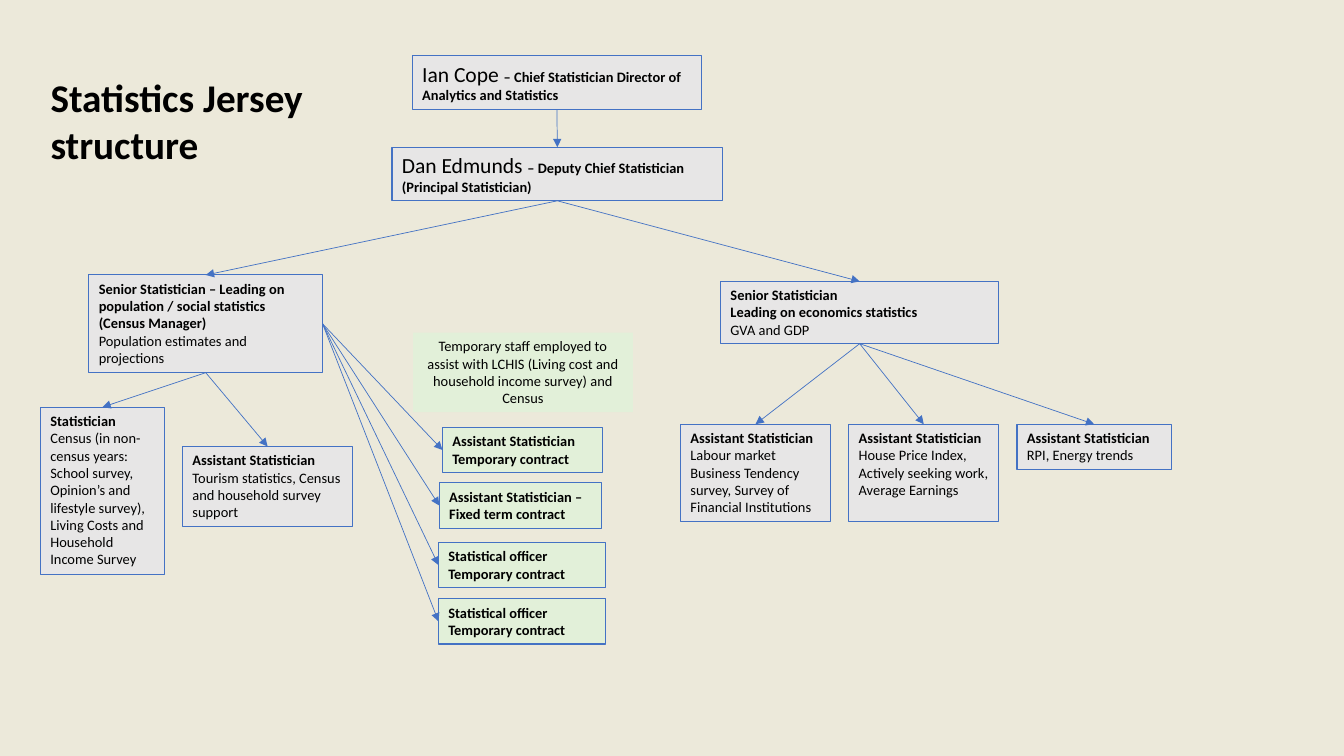
from lxml import etree
from pptx import Presentation
from pptx.dml.color import RGBColor
from pptx.enum.shapes import MSO_CONNECTOR, MSO_SHAPE
from pptx.enum.text import MSO_ANCHOR, MSO_AUTO_SIZE, PP_ALIGN
from pptx.oxml.ns import qn
from pptx.util import Cm, Pt

RECTANGLE = MSO_SHAPE.RECTANGLE
STRAIGHT = MSO_CONNECTOR.STRAIGHT
TOP_ANCHOR = MSO_ANCHOR.TOP
NO_AUTOFIT = MSO_AUTO_SIZE.NONE
LEFT, CENTER = PP_ALIGN.LEFT, PP_ALIGN.CENTER
TOP_SIDE, LEFT_SIDE, BOTTOM_SIDE, RIGHT_SIDE = range(4)
TITLE_ONLY = 5

FONT = "Calibri"
NAME_SIZE, BODY_SIZE, TITLE_SIZE = 15.4, 10.3, 28
BACKGROUND, GREY, GREEN = "ECE9DA", "E7E6E6", "E2F0D9"
BLUE, BLACK = "4472C4", "000000"


def color(hex_value):
    return RGBColor.from_string(hex_value)


def bold(text):
    return text, BODY_SIZE, True


def plain(text):
    return text, BODY_SIZE, False


def name(text):
    return text, NAME_SIZE, False


def write(shape, paragraphs, alignment=LEFT):
    """Fill a shape with paragraphs, each a list of (text, size, bold) runs."""
    frame = shape.text_frame
    frame.word_wrap = True
    frame.auto_size = NO_AUTOFIT
    frame.vertical_anchor = TOP_ANCHOR
    for index, runs in enumerate(paragraphs):
        paragraph = frame.add_paragraph() if index else frame.paragraphs[0]
        paragraph.alignment = alignment
        paragraph.line_spacing = 1.0
        paragraph.space_before = Pt(0)
        for text, size, is_bold in runs:
            run = paragraph.add_run()
            run.text = text
            run.font.name = FONT
            run.font.size = Pt(size)
            run.font.bold = is_bold
            run.font.color.rgb = color(BLACK)


def add_title(slide, place, text):
    title = slide.shapes.title
    title.left, title.top, title.width, title.height = map(Cm, place)
    write(title, [[(text, TITLE_SIZE, True)]])


def add_box(slide, place, fill, paragraphs, alignment=LEFT, outlined=True):
    box = slide.shapes.add_shape(RECTANGLE, *map(Cm, place))
    box.shadow.inherit = False
    box.fill.solid()
    box.fill.fore_color.rgb = color(fill)
    if outlined:
        box.line.color.rgb = color(BLUE)
        box.line.width = Pt(0.75)
    else:
        box.line.fill.background()
    write(box, paragraphs, alignment)
    return box


def add_arrow(slide, start, start_side, end, end_side):
    arrow = slide.shapes.add_connector(STRAIGHT, 0, 0, 0, 0)
    arrow.begin_connect(start, start_side)
    arrow.end_connect(end, end_side)
    arrow.line.color.rgb = color(BLUE)
    arrow.line.width = Pt(0.5)
    etree.SubElement(arrow.line._get_or_add_ln(), qn("a:tailEnd"), type="triangle")
    etree.SubElement(arrow._element.spPr, qn("a:effectLst"))


def main():
    presentation = Presentation()
    presentation.slide_width = Cm(33.87)
    presentation.slide_height = Cm(19.05)
    slide = presentation.slides.add_slide(presentation.slide_layouts[TITLE_ONLY])
    slide.background.fill.solid()
    slide.background.fill.fore_color.rgb = color(BACKGROUND)
    add_title(slide, (1.02, 1.73, 7.29, 2.64), "Statistics Jersey structure")

    # Leadership
    chief = add_box(slide, (10.39, 1.4, 7.29, 1.35), GREY, [
        [name("Ian Cope "),
         bold("– Chief Statistician Director of Analytics and Statistics")]])
    deputy = add_box(slide, (9.88, 3.71, 8.33, 1.35), GREY, [
        [name("Dan Edmunds "), bold("– Deputy Chief Statistician")],
        [bold("(Principal Statistician)")]])

    # Senior statisticians
    social = add_box(slide, (2.24, 6.93, 5.89, 2.46), GREY, [
        [bold("Senior Statistician – Leading on population / social statistics "
              "(Census Manager)")],
        [plain("Population estimates and projections")]])
    economics = add_box(slide, (18.16, 7.09, 7.01, 1.57), GREY, [
        [bold("Senior Statistician")],
        [bold("Leading on economics statistics")],
        [plain("GVA and GDP")]])

    # Social statistics team
    social_team = [add_box(slide, place, GREY, [[bold(role)], [plain(work)]])
                   for place, role, work in (
        ((1.02, 10.26, 3.12, 4.22), "Statistician",
         "Census (in non-census years: School survey, Opinion’s and lifestyle "
         "survey), Living Costs and Household Income Survey"),
        ((4.6, 11.25, 4.29, 2.01), "Assistant Statistician",
         "Tourism statistics, Census and household survey support"))]

    # Economics team
    economics_team = [
        add_box(slide, (17.15 + 4.24 * index, 10.69, width, height), GREY,
                [[bold("Assistant Statistician")]] + [[plain(line)] for line in work])
        for index, (width, height, work) in enumerate((
            (3.78, 2.46, ["Labour market", "Business Tendency survey, Survey of "
                          "Financial Institutions"]),
            (3.78, 2.46, ["House Price Index, Actively seeking work, "
                          "Average Earnings"]),
            (3.89, 1.14, ["RPI, Energy trends"])))]

    # Temporary staff
    add_box(slide, (10.41, 8.38, 5.54, 2.01), GREEN, [
        [plain("Temporary staff employed to assist with LCHIS (Living cost and "
               "household income survey) and Census")]], CENTER, outlined=False)
    temporary_staff = [
        add_box(slide, (left, top, width, 1.14), GREEN,
                [[bold(line)] for line in lines])
        for left, top, width, lines in (
            (11.15, 10.77, 4.04, ["Assistant Statistician", "Temporary contract"]),
            (11.07, 12.17, 4.09, ["Assistant Statistician – Fixed term contract"]),
            (11.05, 13.67, 4.22, ["Statistical officer", "Temporary contract"]),
            (11.05, 15.09, 4.22, ["Statistical officer", "Temporary contract"]))]

    # Reporting lines
    for manager, reports in ((chief, [deputy]), (deputy, [social, economics]),
                             (social, social_team), (economics, economics_team)):
        for report in reports:
            add_arrow(slide, manager, BOTTOM_SIDE, report, TOP_SIDE)
    for report in temporary_staff:
        add_arrow(slide, social, RIGHT_SIDE, report, LEFT_SIDE)

    presentation.save("out.pptx")


if __name__ == "__main__":
    main()
